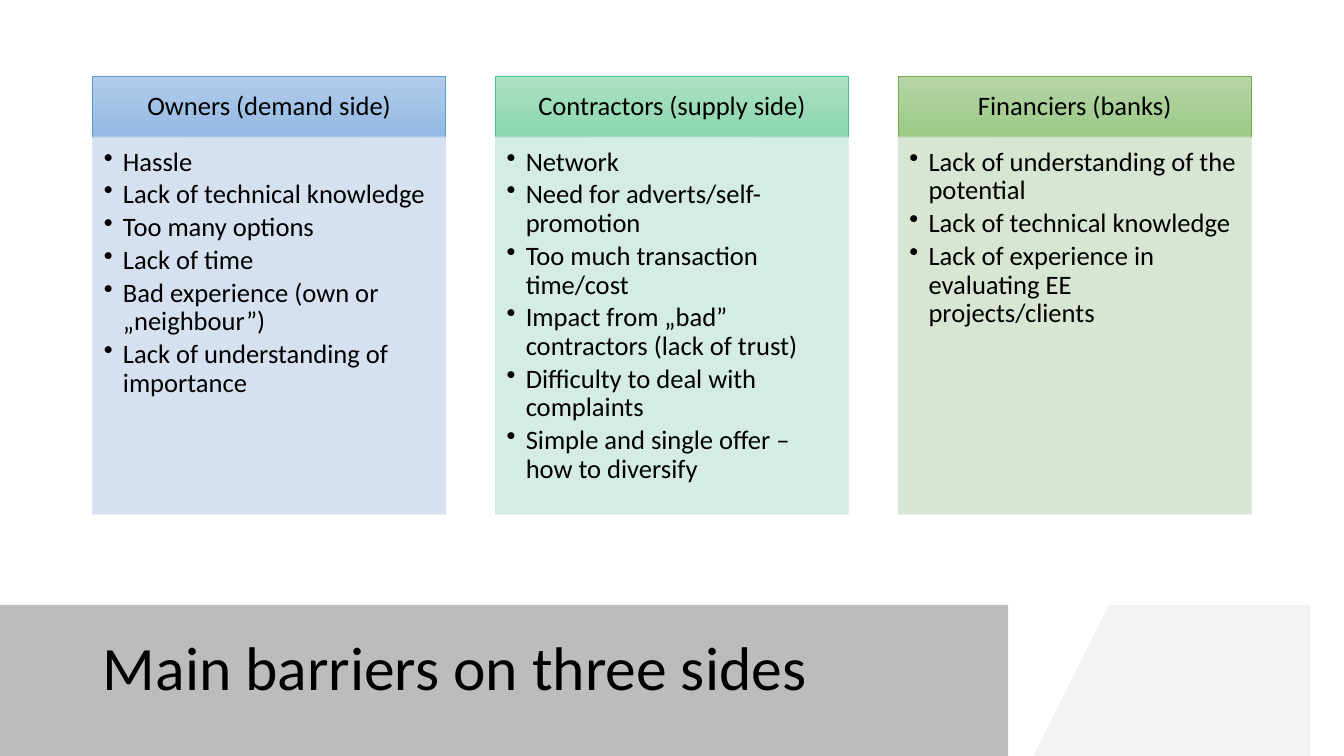
import pptx
import pptx.util
import pptx.dml.color
import pptx.enum.shapes
import pptx.enum.text
import pptx.oxml
import pptx.oxml.ns

Inches, Pt = pptx.util.Inches, pptx.util.Pt
ALIGN, ANCHOR = pptx.enum.text.PP_ALIGN, pptx.enum.text.MSO_ANCHOR

# Grid, in inches
SLIDE_WIDTH, SLIDE_HEIGHT = 13.33, 7.5
LEFT, COLUMN_WIDTH, COLUMN_STEP = 0.92, 3.5, 3.995
HEADER_TOP, HEADER_HEIGHT, BODY_HEIGHT = 0.76, 0.6, 3.74
BAND_TOP = 5.87

FONT, TEXT_SIZE, TITLE_SIZE = "Calibri", 19, 44
BULLET_INDENT = 0.19

# Heading, gradient top and bottom, header line, body fill, bullet points
COLUMNS = [
    ("Owners (demand side)", "B1CBE9", "93B9E4", "5B9BD5", "D2DEEF", [
        "Hassle",
        "Lack of technical knowledge",
        "Too many options",
        "Lack of time",
        "Bad experience (own or „neighbour”)",
        "Lack of understanding of importance",
    ]),
    ("Contractors (supply side)", "ABE0C3", "8CD8AF", "4DC58D", "D0EAE1", [
        "Network",
        "Need for adverts/self-promotion",
        "Too much transaction time/cost",
        "Impact from „bad” contractors (lack of trust)",
        "Difficulty to deal with complaints",
        "Simple and single offer – how to diversify",
    ]),
    ("Financiers (banks)", "B5D5A7", "9CC987", "70AD47", "D5E3CF", [
        "Lack of understanding of the potential",
        "Lack of technical knowledge",
        "Lack of experience in evaluating EE projects/clients",
    ]),
]


def rgb(value):
    return pptx.dml.color.RGBColor.from_string(value)


def set_opacity(shape, percent):
    """Make the solid fill and line of a shape partly transparent."""
    for colour in shape._element.spPr.iter(pptx.oxml.ns.qn("a:srgbClr")):
        alpha = pptx.oxml.parse_xml(
            f'<a:alpha {pptx.oxml.ns.nsdecls("a")} val="{percent * 1000}"/>')
        colour.append(alpha)


def add_bullet(paragraph):
    properties = paragraph._p.get_or_add_pPr()
    properties.set("marL", str(Inches(BULLET_INDENT)))
    properties.set("indent", str(-Inches(BULLET_INDENT)))
    properties.append(pptx.oxml.parse_xml(
        f'<a:buChar {pptx.oxml.ns.nsdecls("a")} char="•"/>'))


def write_text(shape, lines, size, anchor, alignment, space_after=0):
    frame = shape.text_frame
    frame.word_wrap = True
    frame.auto_size = pptx.enum.text.MSO_AUTO_SIZE.NONE
    frame.vertical_anchor = anchor
    frame.text = "\n".join(lines)
    for paragraph in frame.paragraphs:
        paragraph.alignment = alignment
        paragraph.line_spacing = 0.9
        paragraph.space_before = Pt(0)
        paragraph.space_after = Pt(space_after)
        paragraph.font.name = FONT
        paragraph.font.size = Pt(size)
        paragraph.font.color.rgb = rgb("000000")


def set_margins(shape, left, top, right, bottom):
    frame = shape.text_frame
    frame.margin_left, frame.margin_top = Inches(left), Inches(top)
    frame.margin_right, frame.margin_bottom = Inches(right), Inches(bottom)


def add_box(slide, left, top, height, line_colour):
    box = slide.shapes.add_shape(
        pptx.enum.shapes.MSO_SHAPE.RECTANGLE,
        Inches(left), Inches(top), Inches(COLUMN_WIDTH), Inches(height))
    box.shadow.inherit = False
    box.line.color.rgb = rgb(line_colour)
    box.line.width = Pt(0.5)
    return box


def add_header(slide, left, heading, top_colour, bottom_colour, line_colour):
    header = add_box(slide, left, HEADER_TOP, HEADER_HEIGHT, line_colour)
    header.fill.gradient()
    header.fill.gradient_angle = 270
    for stop, colour in zip(header.fill.gradient_stops, (top_colour, bottom_colour)):
        stop.color.rgb = rgb(colour)
    set_margins(header, 0.15, 0.08, 0.15, 0.08)
    write_text(header, [heading], TEXT_SIZE, ANCHOR.MIDDLE, ALIGN.CENTER)


def add_body(slide, left, colour, points):
    body = add_box(slide, left, HEADER_TOP + HEADER_HEIGHT, BODY_HEIGHT, colour)
    body.fill.solid()
    body.fill.fore_color.rgb = rgb(colour)
    set_opacity(body, 90)
    set_margins(body, 0.11, 0.11, 0.15, 0.17)
    write_text(body, points, TEXT_SIZE, ANCHOR.TOP, ALIGN.LEFT, 0.15 * TEXT_SIZE)
    for paragraph in body.text_frame.paragraphs:
        add_bullet(paragraph)


def add_band(slide, top_left, top_right, bottom_right, bottom_left, colour):
    """Add a slanted band from BAND_TOP to the foot of the slide."""
    builder = slide.shapes.build_freeform(top_left, BAND_TOP, scale=Inches(1))
    builder.add_line_segments([
        (top_right, BAND_TOP),
        (bottom_right, SLIDE_HEIGHT),
        (bottom_left, SLIDE_HEIGHT),
    ])
    band = builder.convert_to_shape()
    band.shadow.inherit = False
    band.fill.solid()
    band.fill.fore_color.rgb = rgb(colour)
    band.line.fill.background()
    return band


def place_title(title, text):
    title.left, title.top = Inches(LEFT), Inches(6.05)
    title.width, title.height = Inches(8.83), Inches(1.2)
    write_text(title, [text], TITLE_SIZE, ANCHOR.MIDDLE, ALIGN.LEFT)


def main():
    presentation = pptx.Presentation()
    presentation.slide_width = Inches(SLIDE_WIDTH)
    presentation.slide_height = Inches(SLIDE_HEIGHT)
    slide = presentation.slides.add_slide(presentation.slide_layouts[5])

    # Bands at the foot, moved behind the title
    light_band = add_band(slide, 10.61, SLIDE_WIDTH, SLIDE_WIDTH, 9.86, "F2F2F2")
    grey_band = add_band(slide, 0, 10.46, 9.71, 0, "595959")
    set_opacity(grey_band, 40)
    title = slide.shapes.title
    for band in (light_band, grey_band):
        title._element.addprevious(band._element)
    place_title(title, "Main barriers on three sides")

    # Three columns of barriers
    for index, (heading, top, bottom, line, fill, points) in enumerate(COLUMNS):
        left = LEFT + index * COLUMN_STEP
        add_header(slide, left, heading, top, bottom, line)
        add_body(slide, left, fill, points)

    presentation.save("out.pptx")


if __name__ == "__main__":
    main()
